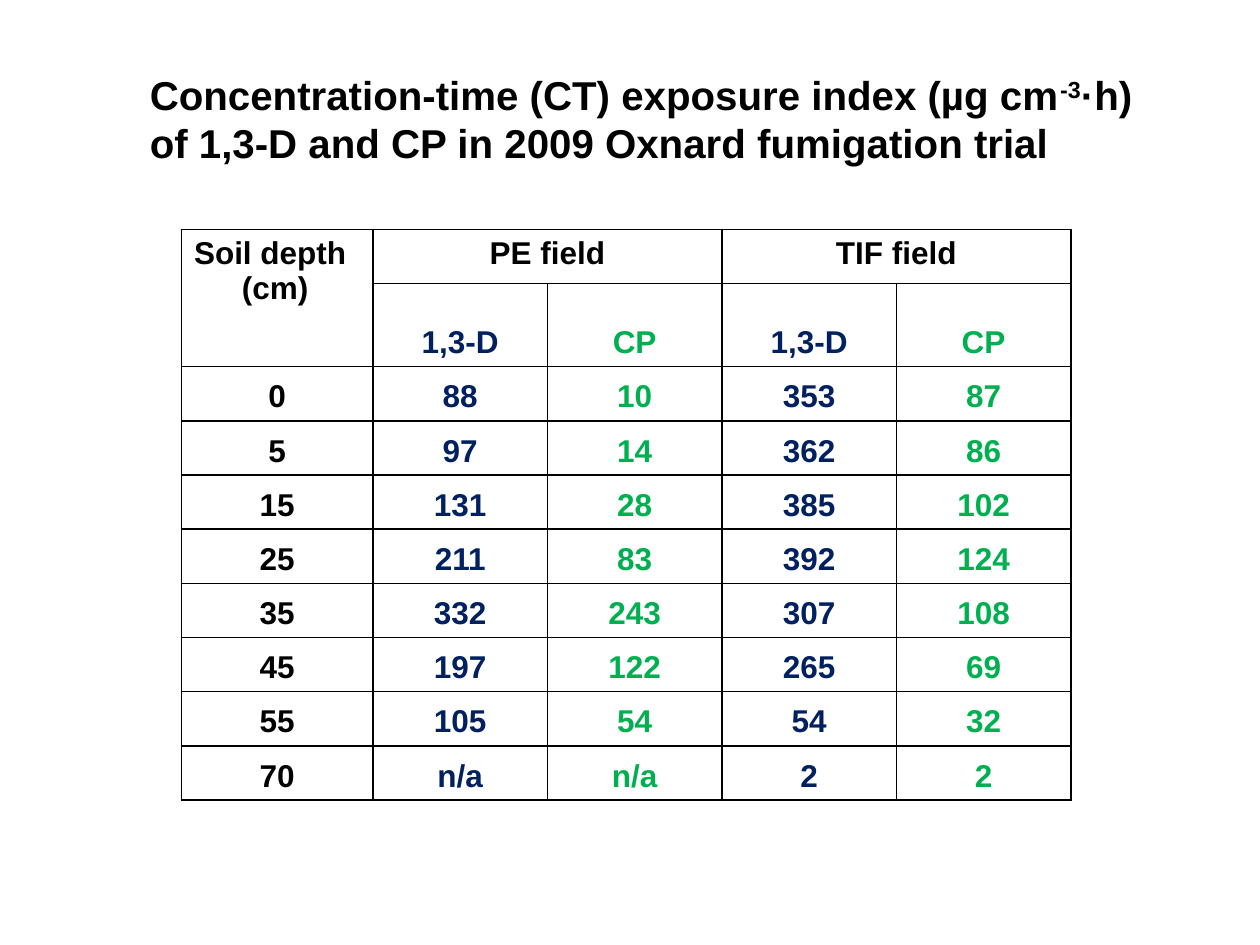
from lxml import etree
from pptx import Presentation
from pptx.dml.color import RGBColor
from pptx.enum.text import MSO_ANCHOR, MSO_AUTO_SIZE, PP_ALIGN
from pptx.oxml.ns import qn
from pptx.util import Inches, Pt

CENTER, LEFT = PP_ALIGN.CENTER, PP_ALIGN.LEFT
TOP, BOTTOM = MSO_ANCHOR.TOP, MSO_ANCHOR.BOTTOM
GROW = MSO_AUTO_SIZE.SHAPE_TO_FIT_TEXT

BLACK = RGBColor(0x00, 0x00, 0x00)
NAVY = RGBColor(0x00, 0x20, 0x60)
GREEN = RGBColor(0x00, 0xB0, 0x50)
COLUMN_COLORS = [BLACK, NAVY, GREEN, NAVY, GREEN]

FONT = "Arial"
SLIDE_WIDTH, SLIDE_HEIGHT = 10, 7.5
TITLE_BOX = (1.09, 0.51, 8.09, 0.88)
TABLE_BOX = (1.44, 1.82, 7.06, 4.4)
DEPTH_COLUMN = 1.52
ROW, SUBHEADER_ROW = 0.43, 0.53
HANGING = Inches(0.38)
HEADER_ROWS = 2

TITLE_RUNS = [
    ("Concentration-time (CT) exposure index (µg cm", 0),
    ("-3", 30000),
    ("·h) of 1,3-D and CP in 2009 Oxnard fumigation trial", 0),
]
ROWS = [
    ["Soil depth (cm)", "PE field", "", "TIF field", ""],
    ["", "1,3-D", "CP", "1,3-D", "CP"],
    ["0", "88", "10", "353", "87"],
    ["5", "97", "14", "362", "86"],
    ["15", "131", "28", "385", "102"],
    ["25", "211", "83", "392", "124"],
    ["35", "332", "243", "307", "108"],
    ["45", "197", "122", "265", "69"],
    ["55", "105", "54", "54", "32"],
    ["70", "n/a", "n/a", "2", "2"],
]
MERGES = [((0, 0), (1, 0)), ((0, 1), (0, 2)), ((0, 3), (0, 4))]


def style_font(font, size, color):
    font.name = FONT
    font.size = Pt(size)
    font.bold = True
    font.color.rgb = color


def add_title(slide, box):
    shape = slide.shapes.add_textbox(*map(Inches, box))
    text_frame = shape.text_frame
    text_frame.word_wrap = True
    text_frame.auto_size = GROW
    paragraph = text_frame.paragraphs[0]
    for text, baseline in TITLE_RUNS:
        run = paragraph.add_run()
        run.text = text
        style_font(run.font, 23, BLACK)
        if baseline:
            run._r.get_or_add_rPr().set("baseline", str(baseline))


def add_borders(cell):
    properties = cell._tc.get_or_add_tcPr()
    for side in ("a:lnL", "a:lnR", "a:lnT", "a:lnB"):
        line = etree.SubElement(properties, qn(side), w=str(Pt(1)))
        fill = etree.SubElement(line, qn("a:solidFill"))
        etree.SubElement(fill, qn("a:srgbClr"), val=str(BLACK))


def fill_cell(cell, text, color, alignment, anchor):
    add_borders(cell)
    cell.fill.background()
    cell.vertical_anchor = anchor
    cell.text_frame.text = text
    paragraph = cell.text_frame.paragraphs[0]
    paragraph.alignment = alignment
    paragraph_properties = paragraph._p.get_or_add_pPr()
    paragraph_properties.set("marL", str(HANGING))
    paragraph_properties.set("indent", str(-HANGING))
    style_font(paragraph.font, 18, color)
    for run in paragraph.runs:
        style_font(run.font, 18, color)


def add_exposure_table(slide, box):
    column_count = len(COLUMN_COLORS)
    shape = slide.shapes.add_table(len(ROWS), column_count, *map(Inches, box))
    table = shape.table
    table.horz_banding = False
    value_column = (box[2] - DEPTH_COLUMN) / (column_count - 1)
    for index, column in enumerate(table.columns):
        column.width = Inches(value_column if index else DEPTH_COLUMN)
    for index, row in enumerate(table.rows):
        row.height = Inches(SUBHEADER_ROW if index == HEADER_ROWS - 1 else ROW)
    for row_index, row in enumerate(ROWS):
        for column_index, text in enumerate(row):
            in_header = row_index < HEADER_ROWS
            fill_cell(
                table.cell(row_index, column_index),
                text,
                COLUMN_COLORS[column_index] if row_index else BLACK,
                LEFT if in_header and column_index == 0 else CENTER,
                BOTTOM if row_index else TOP,
            )
    for first, last in MERGES:
        table.cell(*first).merge(table.cell(*last))


def main():
    presentation = Presentation()
    presentation.slide_width = Inches(SLIDE_WIDTH)
    presentation.slide_height = Inches(SLIDE_HEIGHT)
    slide = presentation.slides.add_slide(presentation.slide_layouts[6])
    add_exposure_table(slide, TABLE_BOX)
    add_title(slide, TITLE_BOX)
    presentation.save("out.pptx")


if __name__ == "__main__":
    main()
